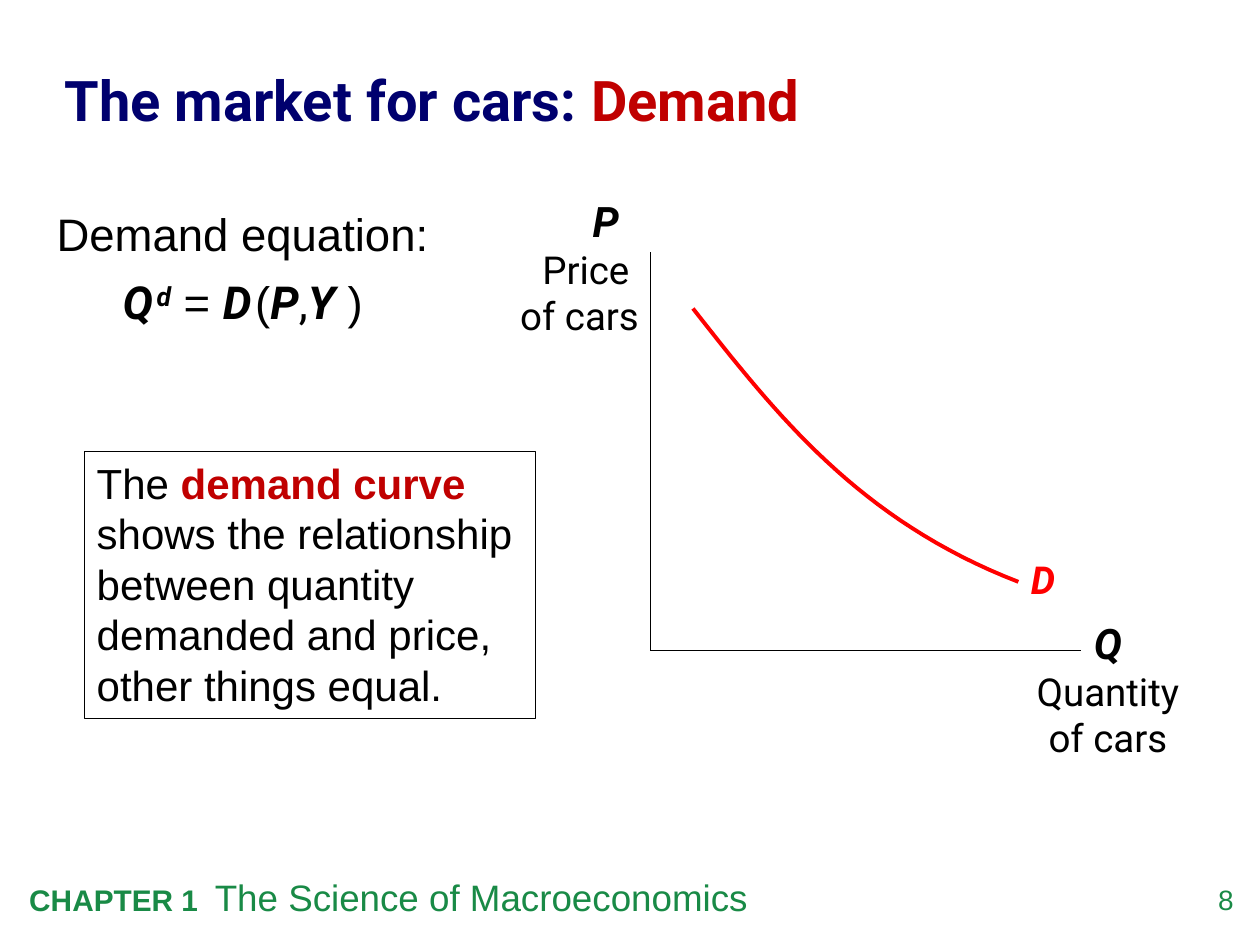
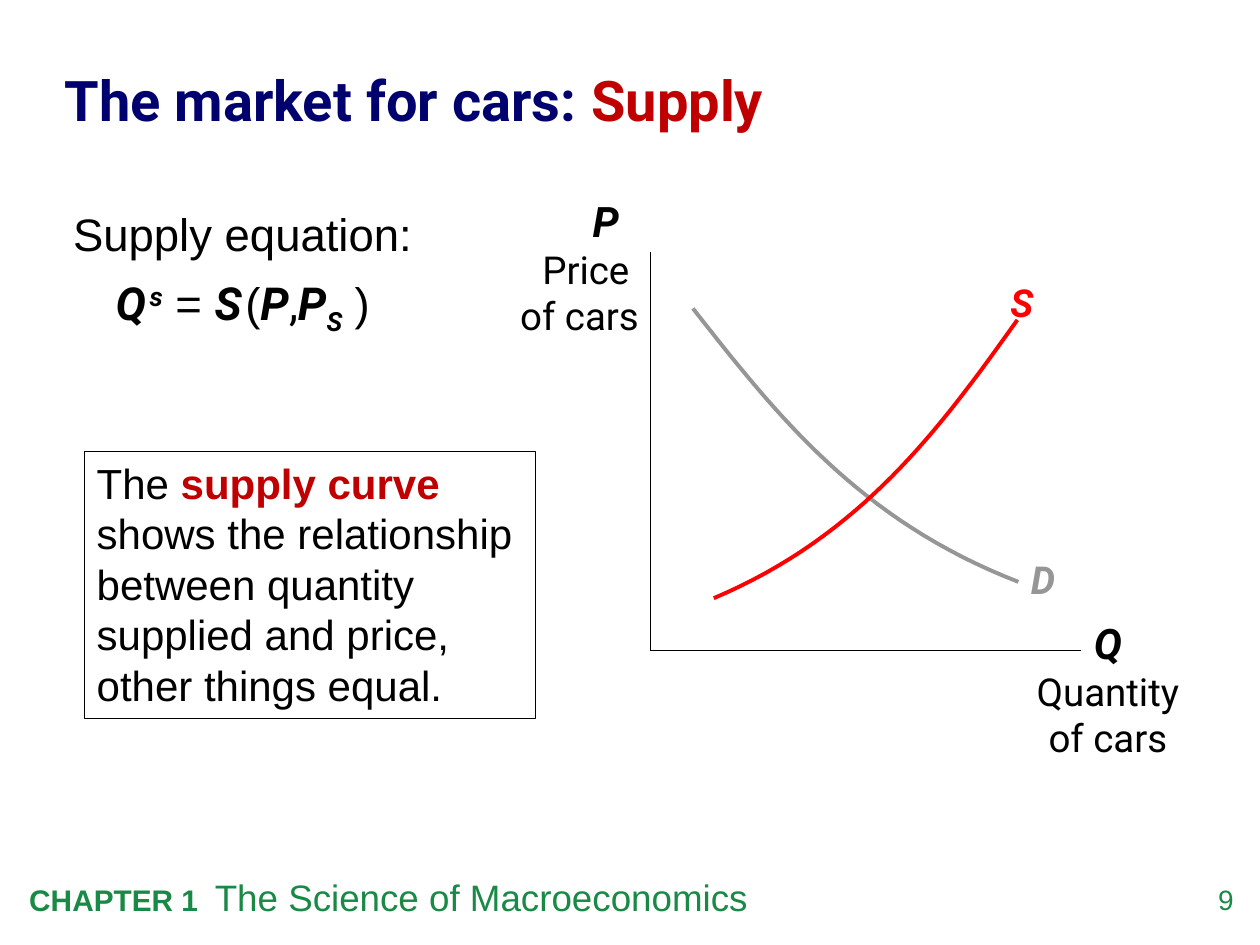
from dataclasses import dataclass

from lxml.etree import SubElement
from pptx import Presentation
from pptx.dml.color import RGBColor
from pptx.enum.shapes import MSO_CONNECTOR, MSO_SHAPE
from pptx.enum.text import MSO_ANCHOR as Anchor
from pptx.enum.text import MSO_AUTO_SIZE as AutoSize
from pptx.enum.text import PP_ALIGN as Align
from pptx.oxml.ns import qn
from pptx.util import Cm, Pt

NAVY = RGBColor(0x00, 0x00, 0x6E)
CRIMSON = RGBColor(0xC0, 0x00, 0x00)
RED = RGBColor(0xFF, 0x00, 0x00)
GREY = RGBColor(0x96, 0x96, 0x96)
GREEN = RGBColor(0x19, 0x8A, 0x46)
BLACK = RGBColor(0x00, 0x00, 0x00)
WHITE = RGBColor(0xFF, 0xFF, 0xFF)

SANS = "Arial"
DISPLAY = "Roboto"
LINE_SPACING = 1.05
CURVE_STEPS = 32

TITLE_BOX = (1.3, 0.66, 22.91, 2.62)
EQUATION_BOX = (0.64, 3.97, 8.51, 2.84)
DEFINITION_BOX = (1.7, 9.1, 9.09, 5.38)
GRAPH_BOX = (13.12, 5.08, 8.67, 8.04)
FOOTER_BOX = (0.34, 17.51, 24.53, 1.14)


@dataclass
class Style:
    """Character formatting of one run."""

    size: float
    font: str = SANS
    color: RGBColor = BLACK
    bold: bool = False
    italic: bool = False
    baseline: int = 0


@dataclass
class Curve:
    """Cubic curve and its label, in cm from the graph's top left corner."""

    name: str
    points: tuple
    label_at: tuple


DEMAND = Curve("D", ((0.85, 1.14), (2.53, 3.28), (4.2, 5.41), (7.41, 6.65)), (7.41, 6.01))
SUPPLY = Curve("S", ((7.39, 1.37), (5.83, 3.56), (4.25, 5.72), (1.27, 6.98)), (7.0, 0.43))

PLAIN = Style(26)
VARIABLE = Style(26, DISPLAY, bold=True, italic=True)
SUPERSCRIPT = Style(26, DISPLAY, bold=True, italic=True, baseline=30)
SUBSCRIPT = Style(26, DISPLAY, bold=True, italic=True, baseline=-25)
THIN_SPACE = (" ", Style(8, DISPLAY, bold=True, italic=True))
AXIS_NAME = Style(24, DISPLAY, bold=True, italic=True)
AXIS_TEXT = Style(22, DISPLAY)


def write_runs(paragraph, runs, align=Align.LEFT, line_spacing=None):
    """Write (text, style) pairs into a paragraph, turning newlines into breaks."""
    paragraph.alignment = align
    if line_spacing:
        paragraph.line_spacing = line_spacing
    for text, style in runs:
        for index, part in enumerate(text.split("\n")):
            if index:
                paragraph.add_line_break()
            run = paragraph.add_run()
            run.text = part
            font = run.font
            font.name, font.size = style.font, Pt(style.size)
            font.bold, font.italic = style.bold, style.italic
            font.color.rgb = style.color
            if style.baseline:
                run._r.get_or_add_rPr().set("baseline", str(style.baseline * 1000))


def add_text(slide, box, runs, align=Align.LEFT, line_spacing=None):
    """Add a wrapping text box with one paragraph and return its frame."""
    frame = slide.shapes.add_textbox(*map(Cm, box)).text_frame
    frame.word_wrap = True
    write_runs(frame.paragraphs[0], runs, align, line_spacing)
    return frame


def clear_margins(frame):
    """Remove the inner margins of a text frame."""
    frame.margin_left = frame.margin_top = frame.margin_right = frame.margin_bottom = 0


def add_footer(slide, box, number):
    """Add the chapter line and the slide number."""
    left, top, width, height = box
    add_text(slide, (left, top, 20.78, height), [
        ("CHAPTER 1  ", Style(17, color=GREEN, bold=True)),
        ("The Science of Macroeconomics", Style(21, color=GREEN)),
    ])
    number_box = (left + width - 1.4, top + 0.28, 1.4, 0.81)
    clear_margins(add_text(slide, number_box, [(str(number), Style(16, color=GREEN))], Align.RIGHT))


def set_title(slide, box, topic):
    """Place the title placeholder and colour its topic."""
    title = slide.shapes.title
    title.left, title.top, title.width, title.height = map(Cm, box)
    frame = title.text_frame
    frame.auto_size = AutoSize.NONE
    frame.vertical_anchor = Anchor.MIDDLE
    clear_margins(frame)
    write_runs(frame.paragraphs[0], [
        ("The market for cars: ", Style(32, DISPLAY, NAVY, bold=True)),
        (topic, Style(32, DISPLAY, CRIMSON, bold=True)),
    ], line_spacing=LINE_SPACING)


def add_equation(slide, box, topic, curve, last_argument):
    """Add the heading and the equation of a curve."""
    frame = add_text(slide, box, [(f"{topic} equation:", PLAIN)], Align.CENTER, LINE_SPACING)
    formula = frame.add_paragraph()
    formula.space_before = Pt(6.5)
    write_runs(formula, [
        ("Q", VARIABLE), THIN_SPACE, (curve.name.lower(), SUPERSCRIPT), (" = ", PLAIN),
        (curve.name, VARIABLE), THIN_SPACE, ("(", PLAIN), ("P", VARIABLE),
        (",", Style(26, DISPLAY)), *last_argument, (" )", PLAIN),
    ], Align.CENTER, LINE_SPACING)


def add_definition(slide, box, topic, verb):
    """Add the framed definition of a curve."""
    shape = slide.shapes.add_shape(MSO_SHAPE.RECTANGLE, *map(Cm, box))
    shape.shadow.inherit = False
    shape.fill.solid()
    shape.fill.fore_color.rgb = WHITE
    shape.line.color.rgb = BLACK
    shape.line.width = Pt(0.75)
    frame = shape.text_frame
    frame.word_wrap = True
    frame.vertical_anchor = Anchor.TOP
    write_runs(frame.paragraphs[0], [
        ("The ", Style(24)),
        (f"{topic.lower()} curve", Style(24, color=CRIMSON, bold=True)),
        (f" shows the relationship between quantity {verb} and price, other things equal.", Style(24)),
    ])


def add_axes(slide, box):
    """Add the price and quantity axes with their labels."""
    left, top, width, height = box
    bottom = top + height
    for end_x, end_y in ((left, top), (left + width, bottom)):
        axis = slide.shapes.add_connector(
            MSO_CONNECTOR.STRAIGHT, Cm(left), Cm(bottom), Cm(end_x), Cm(end_y))
        axis.line.color.rgb = BLACK
        axis.line.width = Pt(0.75)
        SubElement(axis._element.spPr, qn("a:effectLst"))
    add_text(slide, (left + 7.41, bottom - 0.8, 3.61, 3.12),
             [("Q", AXIS_NAME), (" Quantity of cars", AXIS_TEXT)], Align.CENTER)
    add_text(slide, (left - 3.17, top - 1.27, 3.18, 3.18),
             [("P ", AXIS_NAME), (" \nPrice \nof cars", AXIS_TEXT)], Align.RIGHT)


def bezier_point(points, t):
    """Return the point of a cubic curve at parameter t."""
    weights = ((1 - t) ** 3, 3 * t * (1 - t) ** 2, 3 * t ** 2 * (1 - t), t ** 3)
    return tuple(sum(w * p[axis] for w, p in zip(weights, points)) for axis in (0, 1))


def add_curve(slide, box, curve, color):
    """Draw a labelled curve inside the graph box."""
    left, top = box[:2]
    samples = [bezier_point(curve.points, step / CURVE_STEPS) for step in range(CURVE_STEPS + 1)]
    start, *rest = [(Cm(left + x), Cm(top + y)) for x, y in samples]
    builder = slide.shapes.build_freeform(*start)
    builder.add_line_segments(rest, close=False)
    line = builder.convert_to_shape()
    line.shadow.inherit = False
    line.fill.background()
    line.line.color.rgb = color
    line.line.width = Pt(2.25)
    label_x, label_y = curve.label_at
    add_text(slide, (left + label_x, top + label_y, 1.27, 1.19),
             [(curve.name, Style(22, DISPLAY, color, bold=True, italic=True))])


def add_market_slide(presentation, number, topic, verb, curve, last_argument, earlier_curves=()):
    """Add a slide that presents one curve of the car market."""
    slide = presentation.slides.add_slide(presentation.slide_layouts[5])
    add_footer(slide, FOOTER_BOX, number)
    set_title(slide, TITLE_BOX, topic)
    add_axes(slide, GRAPH_BOX)
    for earlier in earlier_curves:
        add_curve(slide, GRAPH_BOX, earlier, GREY)
    add_curve(slide, GRAPH_BOX, curve, RED)
    add_definition(slide, DEFINITION_BOX, topic, verb)
    add_equation(slide, EQUATION_BOX, topic, curve, last_argument)


def main():
    """Build and save the presentation."""
    presentation = Presentation()
    presentation.slide_width, presentation.slide_height = Cm(25.4), Cm(19.05)
    add_market_slide(presentation, 8, "Demand", "demanded", DEMAND, [("Y", VARIABLE)])
    add_market_slide(presentation, 9, "Supply", "supplied", SUPPLY,
                     [("P", VARIABLE), ("S", SUBSCRIPT)], [DEMAND])
    presentation.save("out.pptx")


if __name__ == "__main__":
    main()
